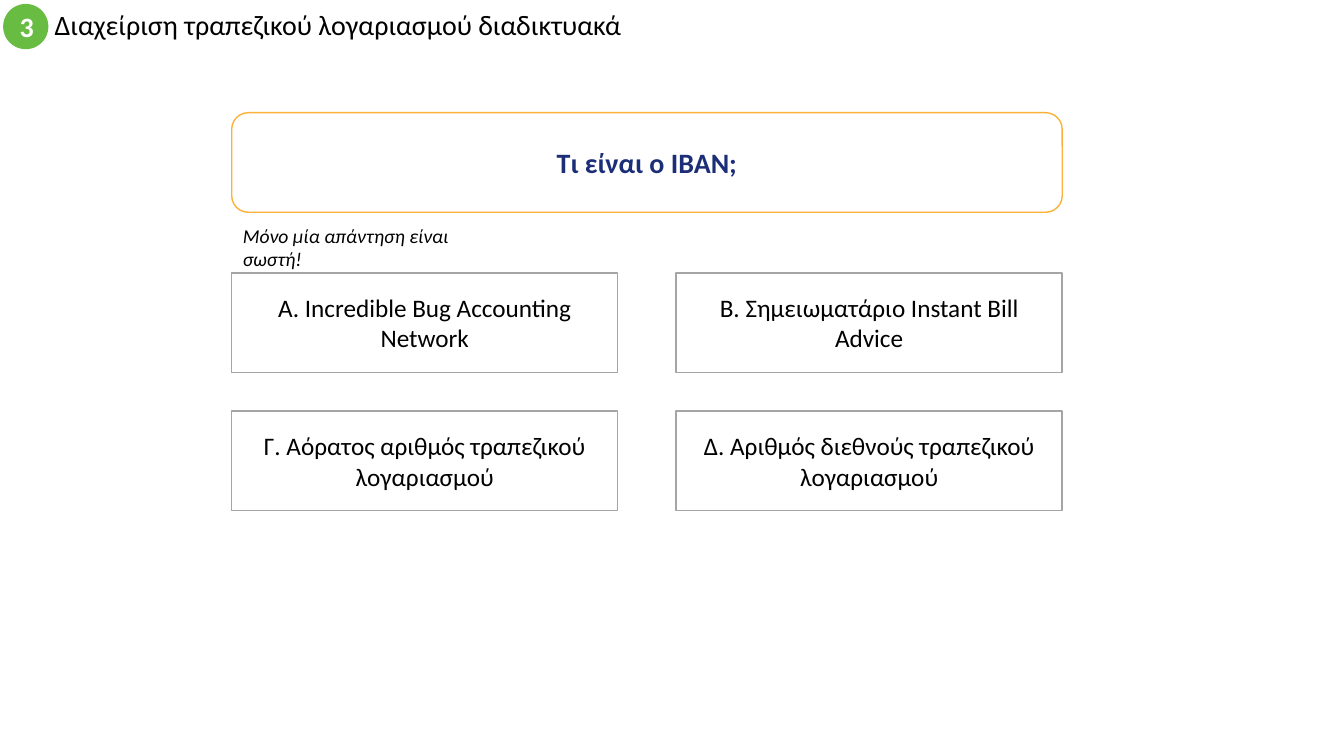
from dataclasses import dataclass

from pptx import Presentation
from pptx.dml.color import RGBColor
from pptx.enum.shapes import MSO_SHAPE
from pptx.enum.text import MSO_ANCHOR, MSO_AUTO_SIZE, PP_ALIGN
from pptx.util import Cm, Pt


@dataclass(frozen=True)
class Theme:
    font: str = "Calibri"
    black: str = "000000"
    white: str = "FFFFFF"
    green: str = "68BC42"
    orange: str = "FCB13A"
    navy: str = "1C2E78"
    gray: str = "A5A5A5"
    head: int = 20
    answer: int = 18
    hint: int = 14


THEME = Theme()


@dataclass(frozen=True)
class Box:
    """A filled shape with centred text; lengths are in centimetres."""
    text: str
    left: float
    top: float
    width: float
    height: float
    kind: MSO_SHAPE = MSO_SHAPE.RECTANGLE
    fill: str = THEME.white
    line: str | None = THEME.gray
    color: str = THEME.black
    size: int = THEME.answer
    bold: bool = False


LEFT, WIDTH, HEIGHT = 5.84, 20.93, 2.51
CELL, TOP = 9.73, 6.88
STEP_X, STEP_Y = WIDTH - CELL, 3.48
ANSWERS = (
    "A. Incredible Bug Accounting Network",
    "B. Σημειωματάριο Instant Bill Advice",
    "Γ. Αόρατος αριθμός τραπεζικού λογαριασμού",
    "Δ. Αριθμός διεθνούς τραπεζικού λογαριασμού",
)

BADGE = Box("3", 0.08, 0.1, 1.14, 1.14, MSO_SHAPE.OVAL, THEME.green, None,
            THEME.white, THEME.head, True)
QUESTION = Box("Τι είναι ο IBAN;", LEFT, 2.84, WIDTH, HEIGHT,
               MSO_SHAPE.ROUNDED_RECTANGLE, line=THEME.orange,
               color=THEME.navy, size=THEME.head, bold=True)


def write(shape, text: str, *, size: int, color: str = THEME.black,
          bold: bool = False, italic: bool = False,
          align: PP_ALIGN = PP_ALIGN.LEFT,
          anchor: MSO_ANCHOR = MSO_ANCHOR.MIDDLE,
          spacing: float = 1.0) -> None:
    frame = shape.text_frame
    frame.word_wrap = True
    frame.auto_size = MSO_AUTO_SIZE.NONE
    frame.vertical_anchor = anchor
    para = frame.paragraphs[0]
    para.alignment = align
    para.line_spacing = spacing
    run = para.add_run()
    run.text = text
    font = run.font
    font.name, font.size = THEME.font, Pt(size)
    font.bold, font.italic = bold, italic
    font.color.rgb = RGBColor.from_string(color)


def draw(slide, box: Box) -> None:
    shape = slide.shapes.add_shape(
        box.kind, Cm(box.left), Cm(box.top), Cm(box.width), Cm(box.height))
    shape.shadow.inherit = False
    shape.fill.solid()
    shape.fill.fore_color.rgb = RGBColor.from_string(box.fill)
    if box.line:
        shape.line.color.rgb = RGBColor.from_string(box.line)
        shape.line.width = Pt(1)
    else:
        shape.line.fill.background()
    write(shape, box.text, size=box.size, color=box.color, bold=box.bold,
          align=PP_ALIGN.CENTER)


def main() -> None:
    deck = Presentation()
    deck.slide_width, deck.slide_height = Cm(33.87), Cm(19.05)
    slide = deck.slides.add_slide(deck.slide_layouts.get_by_name("Title Only"))

    title = slide.shapes.title
    title.left, title.top = Cm(1.12), Cm(0.1)
    title.width, title.height = Cm(20.32), Cm(1.14)
    write(title, "Διαχείριση τραπεζικού λογαριασμού διαδικτυακά",
          size=THEME.head, spacing=0.9)

    draw(slide, BADGE)
    draw(slide, QUESTION)
    for i, text in enumerate(ANSWERS):
        row, col = divmod(i, 2)
        draw(slide, Box(text, LEFT + col * STEP_X, TOP + row * STEP_Y,
                        CELL, HEIGHT))

    hint = slide.shapes.add_textbox(Cm(5.87), Cm(5.51), Cm(6), Cm(0.86))
    write(hint, "Μόνο μία απάντηση είναι σωστή!", size=THEME.hint,
          italic=True, anchor=MSO_ANCHOR.TOP)

    deck.save("out.pptx")


if __name__ == "__main__":
    main()
